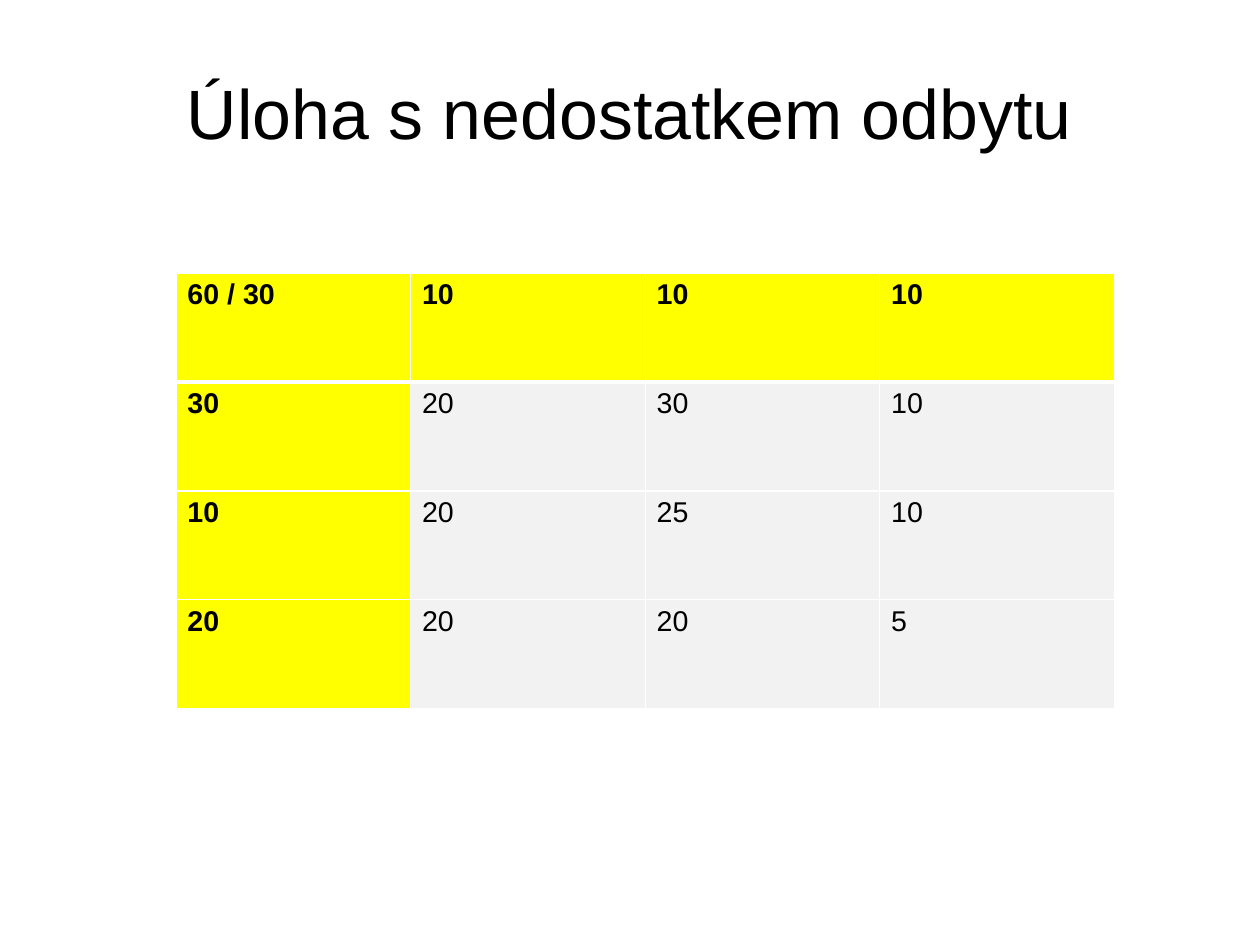
from dataclasses import dataclass

from lxml.etree import SubElement
from pptx import Presentation
from pptx.dml.color import RGBColor
from pptx.enum.text import MSO_ANCHOR, PP_ALIGN
from pptx.oxml.ns import qn
from pptx.util import Inches, Pt


@dataclass(frozen=True)
class Theme:
    font: str = "Arial"
    text: str = "000000"
    header: str = "FFFF00"
    body: str = "F2F2F2"
    border: str = "FFFFFF"
    title_size: int = 44
    cell_size: int = 18
    thin: int = 1
    thick: int = 3


THEME = Theme()
CM_PER_INCH = 2.54
TITLE = "Úloha s nedostatkem odbytu"
# Supplies in the first column, demands in the first row
TRANSPORT_COSTS = [
    ["60 / 30", "10", "10", "10"],
    ["30", "20", "30", "10"],
    ["10", "20", "25", "10"],
    ["20", "20", "20", "5"],
]


def apply_format(target, values):
    for name, value in values.items():
        setattr(target, name, value)


def write_text(para, text, size, bold=False):
    span = para.add_run()
    span.text = text
    apply_format(span.font, {"name": THEME.font, "size": Pt(size), "bold": bold})
    span.font.color.rgb = RGBColor.from_string(THEME.text)


def add_title(page, text):
    box = page.shapes.add_textbox(Inches(0.55), Inches(0.33), Inches(9.92), Inches(1.38))
    apply_format(box.text_frame, {
        "word_wrap": True, "vertical_anchor": MSO_ANCHOR.MIDDLE,
        "margin_left": 0, "margin_right": 0, "margin_top": 0, "margin_bottom": 0,
    })
    para = box.text_frame.paragraphs[0]
    apply_format(para, {"alignment": PP_ALIGN.CENTER, "line_spacing": 0.9})
    write_text(para, text, THEME.title_size)


def set_borders(cell, widths):
    properties = cell._tc.get_or_add_tcPr()
    for side, width in widths.items():
        line = SubElement(properties, qn(f"a:ln{side}"), w=str(Pt(width)))
        fill = SubElement(line, qn("a:solidFill"))
        SubElement(fill, qn("a:srgbClr"), val=THEME.border)


def format_cell(cell, text, row, column):
    is_header = row == 0 or column == 0
    write_text(cell.text_frame.paragraphs[0], text, THEME.cell_size, is_header)
    # Borders come before the fill in the cell properties
    set_borders(cell, {
        "L": THEME.thin,
        "R": THEME.thin,
        "T": THEME.thick if row == 1 else THEME.thin,
        "B": THEME.thick if row == 0 else THEME.thin,
    })
    cell.fill.solid()
    cell.fill.fore_color.rgb = RGBColor.from_string(THEME.header if is_header else THEME.body)


def add_cost_table(page, rows):
    table = page.shapes.add_table(
        len(rows), len(rows[0]),
        Inches(1.54), Inches(2.39), Inches(8.21), Inches(3.81),
    ).table
    for row, values in enumerate(rows):
        for column, text in enumerate(values):
            format_cell(table.cell(row, column), text, row, column)


def main():
    # Page of 28 by 21 cm
    deck = Presentation()
    deck.slide_width = Inches(28 / CM_PER_INCH)
    deck.slide_height = Inches(21 / CM_PER_INCH)
    page = deck.slides.add_slide(deck.slide_layouts[6])

    # Title and table
    add_title(page, TITLE)
    add_cost_table(page, TRANSPORT_COSTS)
    deck.save("out.pptx")


if __name__ == "__main__":
    main()
